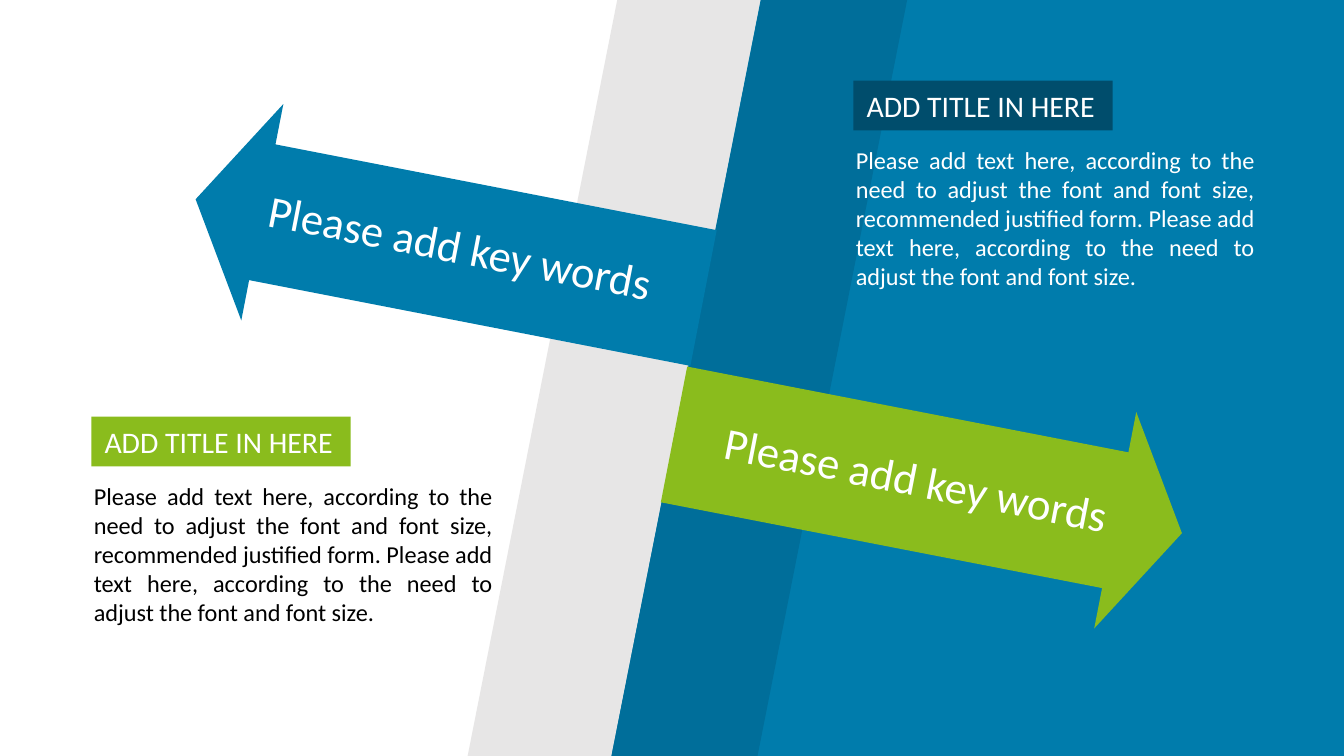
from pptx import Presentation
from pptx.dml.color import RGBColor
from pptx.enum import shapes, text
from pptx.util import Inches, Pt

WHITE = RGBColor(0xFF, 0xFF, 0xFF)
BLACK = RGBColor(0, 0, 0)
GREY = RGBColor(0xE7, 0xE6, 0xE6)
BLUE = RGBColor(0x00, 0x7C, 0xAC)
MID_BLUE = RGBColor(0x00, 0x6E, 0x9A)
DARK_BLUE = RGBColor(0x00, 0x4D, 0x6C)
GREEN = RGBColor(0x8A, 0xBC, 0x1D)

WIDTH = 10
HEIGHT = WIDTH * 9 / 16
TILT = 11
TITLE = "ADD TITLE IN HERE"
KEY_WORDS = "Please add key words"
BODY = ("Please add text here, according to the need to adjust the font and font size, "
        "recommended justified form. Please add text here, according to the need to "
        "adjust the font and font size. ")


def paint(sp, color):
    sp.shadow.inherit = False
    sp.fill.solid()
    sp.fill.fore_color.rgb = color
    sp.line.fill.background()


def add_shape(s, kind, x, y, w, h, color):
    sp = s.shapes.add_shape(kind, Inches(x), Inches(y), Inches(w), Inches(h))
    paint(sp, color)
    return sp


def write(sp, words, size, color, align, after=0, wrap=True):
    tf = sp.text_frame
    tf.word_wrap = wrap
    tf.text = words
    p = tf.paragraphs[0]
    p.alignment = align
    p.space_after = Pt(after)
    font = p.runs[0].font
    font.name, font.size, font.color.rgb = "Calibri", Pt(size), color


def add_text(s, x, y, w, h, *args, **kwargs):
    sp = s.shapes.add_textbox(Inches(x), Inches(y), Inches(w), Inches(h))
    write(sp, *args, **kwargs)
    return sp


def add_band(s, x, color):
    """Slanted full-height stripe."""
    sp = add_shape(s, shapes.MSO_SHAPE.PARALLELOGRAM, x, 0, 2.2, HEIGHT, color)
    sp.adjustments[0] = 0.506


def add_background(s):
    add_band(s, 3.48, GREY)
    fb = s.shapes.build_freeform(Inches(5.66), 0)
    fb.add_line_segments([(Inches(x), Inches(y)) for x, y in
                          ((WIDTH, 0), (WIDTH, HEIGHT), (4.55, HEIGHT))])
    paint(fb.convert_to_shape(), BLUE)
    add_band(s, 4.55, MID_BLUE)


def add_arrow(s, x, y, color, turn, dx, dy, align):
    """Tilted arrow, turned by 0 or 180 degrees, with key words offset by dx, dy."""
    sp = add_shape(s, shapes.MSO_SHAPE.RIGHT_ARROW, x, y, 3.85, 1.64, color)
    sp.adjustments[0], sp.adjustments[1] = 0.627, 0.308
    sp.rotation = TILT + turn
    label = add_text(s, x + dx, y + dy, 3.09, 0.5, KEY_WORDS, 24, WHITE, align, after=6)
    label.rotation = TILT


def add_panel(s, x, y, title_fill, body_color):
    add_text(s, x - 0.08, y + 0.43, 3.16, 1.24, BODY, 13, body_color,
             text.PP_ALIGN.JUSTIFY, after=6)
    sp = add_shape(s, shapes.MSO_SHAPE.RECTANGLE, x, y, 1.93, 0.37, title_fill)
    write(sp, TITLE, 16, WHITE, text.PP_ALIGN.LEFT, wrap=False)


def main():
    prs = Presentation()
    prs.slide_width, prs.slide_height = Inches(WIDTH), Inches(HEIGHT)
    s = prs.slides.add_slide(prs.slide_layouts[6])
    add_background(s)
    add_arrow(s, 1.42, 1.03, BLUE, 180, 0.46, 0.55, text.PP_ALIGN.JUSTIFY)
    add_arrow(s, 4.98, 2.78, GREEN, 0, 0.29, 0.53, text.PP_ALIGN.RIGHT)
    add_panel(s, 6.35, 0.6, DARK_BLUE, WHITE)
    add_panel(s, 0.68, 3.1, GREEN, BLACK)
    prs.save("out.pptx")


if __name__ == "__main__":
    main()
